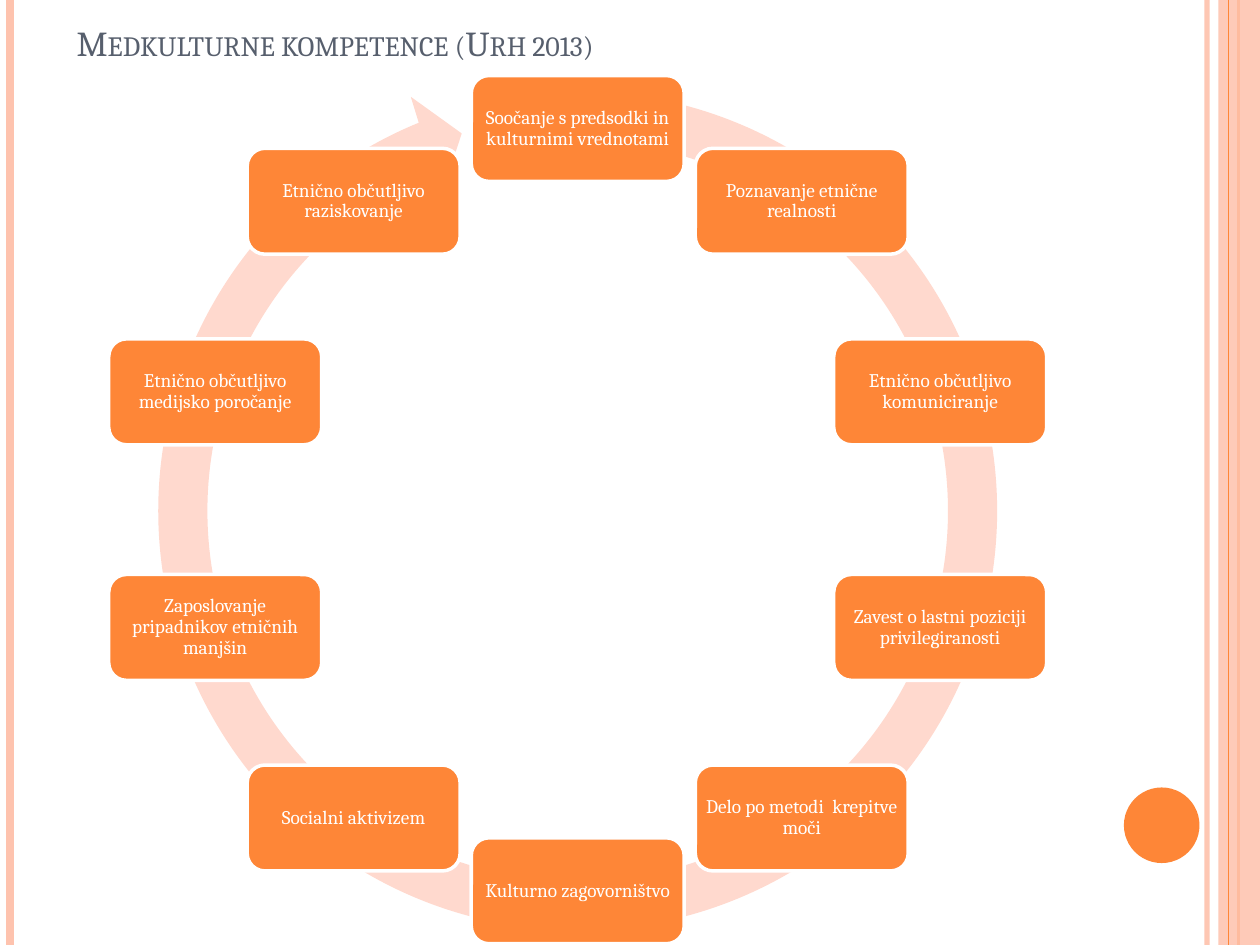
import math
from dataclasses import dataclass

from lxml import etree
from pptx import Presentation
from pptx import util as u
from pptx.dml.color import RGBColor
from pptx.enum import shapes, text
from pptx.oxml import ns


@dataclass(frozen=True)
class Theme:
    font: str = "Cambria"
    title: int = 20
    label: int = 11
    ink: str = "575F6D"
    white: str = "FFFFFF"
    orange: str = "FE8637"
    peach: str = "FEC3AE"
    ring: str = "FFD9CE"


def write(frame, words, size, color, font, align=text.PP_ALIGN.LEFT,
          anchor=text.MSO_ANCHOR.MIDDLE, side=0.1, edge=0.05, space=1.0, small=False):
    frame.word_wrap = True
    frame.vertical_anchor = anchor
    frame.margin_left = frame.margin_right = u.Inches(side)
    frame.margin_top = frame.margin_bottom = u.Inches(edge)
    para = frame.paragraphs[0]
    para.alignment = align
    para.line_spacing = space
    run = para.add_run()
    run.text = words
    run.font.name = font
    run.font.size = u.Pt(size)
    run.font.color.rgb = RGBColor.from_string(color)
    if small:
        run.font._element.set("cap", "small")


def fade(fill, alpha):
    """Set the opacity, in percent, of the solid colour under an element."""
    color = fill.find(".//" + ns.qn("a:srgbClr"))
    etree.SubElement(color, ns.qn("a:alpha")).set("val", str(alpha * 1000))


class Deck:
    def __init__(self, theme):
        self.theme = theme
        self.show = Presentation()
        self.show.slide_width = u.Inches(10)
        self.show.slide_height = u.Inches(7.5)
        self.slide = self.show.slides.add_slide(self.show.slide_layouts[6])

    def shape(self, kind, x, y, w, h, fill, line=None, alpha=None):
        item = self.slide.shapes.add_shape(kind, *map(u.Inches, (x, y, w, h)))
        item.shadow.inherit = False
        item.fill.solid()
        item.fill.fore_color.rgb = RGBColor.from_string(fill)
        if line:
            item.line.color.rgb = RGBColor.from_string(line)
            item.line.width = u.Pt(2)
        else:
            item.line.fill.background()
        if alpha:
            fade(item._element.spPr, alpha)
        return item

    def rule(self, x, color, width, alpha=None):
        """Draw a vertical line over the full height of the slide."""
        line = self.slide.shapes.add_connector(
            shapes.MSO_CONNECTOR.STRAIGHT, u.Inches(x), 0, u.Inches(x), u.Inches(7.5))
        line.line.color.rgb = RGBColor.from_string(color)
        line.line.width = u.Pt(width)
        props = line._element.spPr
        if alpha:
            fade(props, alpha)
        etree.SubElement(props, ns.qn("a:effectLst"))

    def title(self, words):
        box = self.slide.shapes.add_textbox(*map(u.Inches, (0.51, 0, 9, 0.55)))
        write(box.text_frame, words, self.theme.title, self.theme.ink,
              self.theme.font, anchor=text.MSO_ANCHOR.BOTTOM, small=True)

    def card(self, words, x, y, w, h):
        """Draw a rounded card centred on x, y."""
        box = self.shape(shapes.MSO_SHAPE.ROUNDED_RECTANGLE, x - w / 2, y - h / 2,
                         w, h, self.theme.orange, self.theme.white)
        write(box.text_frame, words, self.theme.label, self.theme.white,
              self.theme.font, align=text.PP_ALIGN.CENTER, side=0.01, edge=0.01,
              space=0.9)

    def cycle(self, labels, x, y, reach, size):
        """Place cards clockwise from the top, over a circular arrow."""
        ring = self.shape(shapes.MSO_SHAPE.CIRCULAR_ARROW, x - size / 2,
                          y + 0.01 - size / 2, size, size, self.theme.ring)
        # Band width, head angle, end angle, start angle, head width
        for i, value in enumerate((0.055, 3.307, 148.445, 167.642, 0.058)):
            ring.adjustments[i] = value
        for i, words in enumerate(labels):
            turn = math.tau * i / len(labels)
            self.card(words, x + reach * math.sin(turn),
                      y - reach * math.cos(turn), 1.69, 0.84)


SKILLS = (
    "Soočanje s predsodki in kulturnimi vrednotami",
    "Poznavanje etnične realnosti",
    "Etnično občutljivo komuniciranje",
    "Zavest o lastni poziciji privilegiranosti",
    "Delo po metodi  krepitve moči",
    "Kulturno zagovorništvo",
    "Socialni aktivizem",
    "Zaposlovanje pripadnikov etničnih manjšin",
    "Etnično občutljivo medijsko poročanje",
    "Etnično občutljivo raziskovanje",
)


def main():
    theme = Theme()
    deck = Deck(theme)

    # Side stripes and dot
    deck.rule(9.58, theme.peach, 3, alpha=93)
    deck.rule(0.08, theme.peach, 4.5)
    deck.rule(9.83, theme.orange, 1.5)
    deck.shape(shapes.MSO_SHAPE.RECTANGLE, 9.67, 0, 0.33, 7.5, theme.peach, alpha=87)
    deck.rule(9.75, theme.orange, 0.75)
    deck.shape(shapes.MSO_SHAPE.OVAL, 8.92, 6.25, 0.6, 0.6, theme.orange)

    # Heading and cycle of skills
    deck.title("Medkulturne kompetence (Urh 2013)")
    deck.cycle(SKILLS, x=4.585, y=4.045, reach=3.025, size=7.09)

    deck.show.save("out.pptx")


if __name__ == "__main__":
    main()
